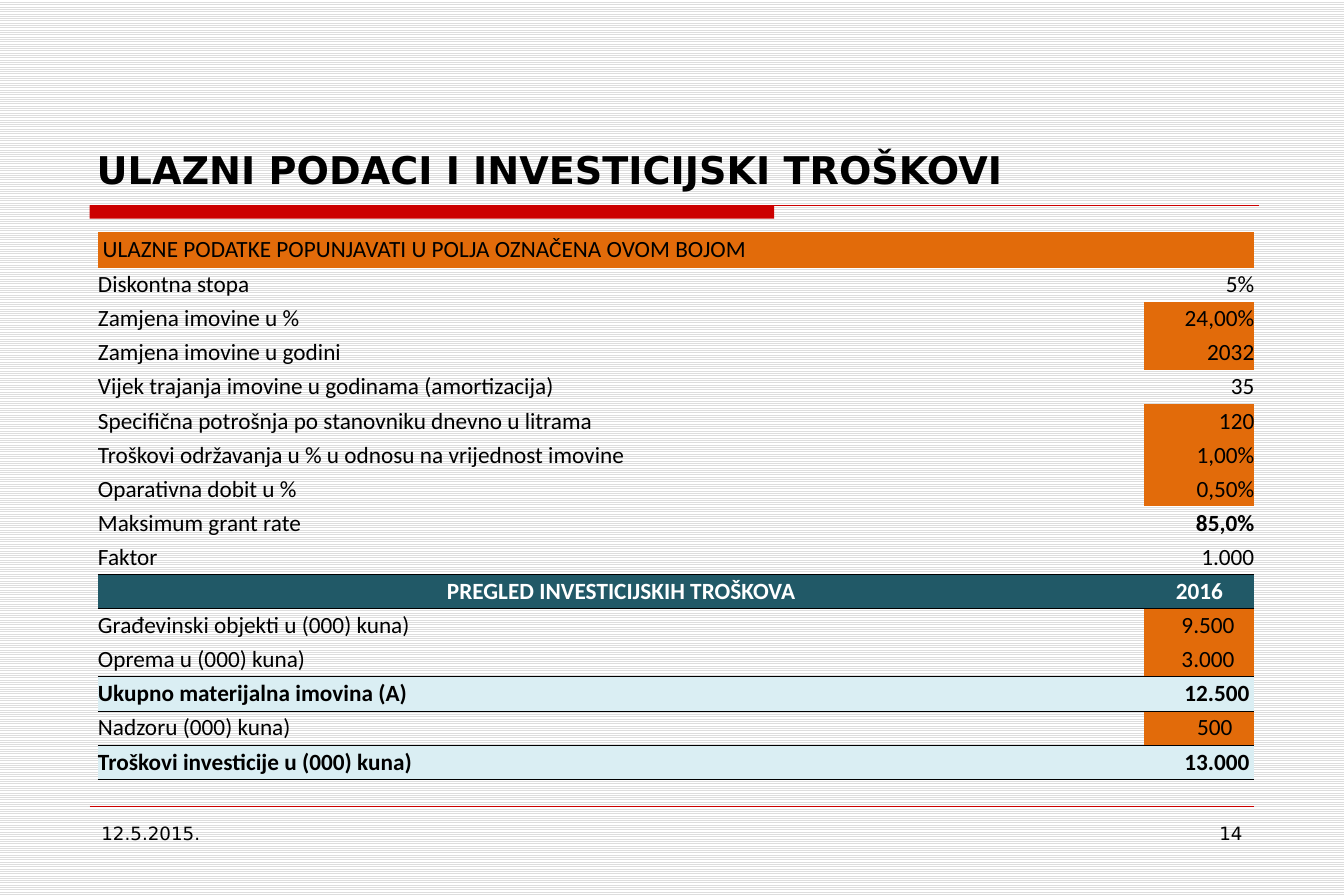
from lxml import etree
from pptx import Presentation
from pptx.dml.color import RGBColor
from pptx.enum.dml import MSO_PATTERN
from pptx.enum.shapes import MSO_CONNECTOR, MSO_SHAPE
from pptx.enum.text import MSO_ANCHOR, MSO_AUTO_SIZE, PP_ALIGN
from pptx.oxml.ns import qn
from pptx.util import Inches, Pt

COLORS = {
    "black": "000000",
    "white": "FFFFFF",
    "stripe": "DDDDDD",
    "red": "CC0000",
    "input": "E26B0A",
    "heading": "215967",
    "total": "DAEEF3",
}
TITLE = "ULAZNI PODACI I INVESTICIJSKI TROŠKOVI"
DATE = "12.5.2015."
PAGE_NUMBER = "14"

# Label, value, kind of row
ROWS = [
    ("ULAZNE PODATKE POPUNJAVATI U POLJA OZNAČENA OVOM BOJOM", "", "legend"),
    ("Diskontna stopa", "5%", "fixed"),
    ("Zamjena imovine u %", "24,00%", "input"),
    ("Zamjena imovine u godini", "2032", "input"),
    ("Vijek trajanja imovine u godinama (amortizacija)", "35", "fixed"),
    ("Specifična potrošnja po stanovniku dnevno u litrama", "120", "input"),
    ("Troškovi održavanja u % u odnosu na vrijednost imovine", "1,00%", "input"),
    ("Oparativna dobit u %", "0,50%", "input"),
    ("Maksimum grant rate", "85,0%", "strong"),
    ("Faktor", "1.000", "fixed"),
    ("PREGLED INVESTICIJSKIH TROŠKOVA", "2016", "heading"),
    ("Građevinski objekti u (000) kuna)", "9.500", "cost"),
    ("Oprema u (000) kuna)", "3.000", "cost"),
    ("Ukupno materijalna imovina (A)", "12.500", "total"),
    ("Nadzoru (000) kuna)", "500", "cost"),
    ("Troškovi investicije u (000) kuna)", "13.000", "total"),
]
RULED = ("heading", "total")  # rows with a line above and below

# Fills of the label and value cells by kind of row
FILLS = {
    "legend": ("input", "input"),
    "input": (None, "input"),
    "cost": (None, "input"),
    "heading": ("heading", "heading"),
    "total": ("total", "total"),
}
COST_INDENTS = {"9.500": 0.31, "3.000": 0.31, "500": 0.44}
COLUMN_WIDTHS = (8.76, 0.92)
TABLE_HEIGHT = 4.57


def rgb(name):
    return RGBColor.from_string(COLORS[name])


def add_run(para, text, size, font, color="black", bold=False):
    span = para.add_run()
    span.text = text
    span.font.size = Pt(size)
    span.font.name = font
    span.font.bold = bold
    span.font.color.rgb = rgb(color)


def add_rule(page, left, right, top, width):
    """Draw a horizontal red line."""
    rule = page.shapes.add_connector(
        MSO_CONNECTOR.STRAIGHT, Inches(left), Inches(top), Inches(right), Inches(top))
    rule.line.color.rgb = rgb("red")
    rule.line.width = Pt(width)
    etree.SubElement(rule._element.spPr, qn("a:effectLst"))


def add_footer(page, text, left, align):
    box = page.shapes.add_textbox(Inches(left), Inches(6.83), Inches(2.43), Inches(0.52))
    box.text_frame.word_wrap = True
    para = box.text_frame.paragraphs[0]
    para.alignment = align
    add_run(para, text, 11, "DejaVu Sans")


def set_borders(cell, above, below):
    """Line the cell above and below where asked, and clear its other edges."""
    edges = (("a:lnL", False), ("a:lnR", False), ("a:lnT", above), ("a:lnB", below))
    properties = cell._tc.get_or_add_tcPr()
    for place, (tag, drawn) in enumerate(edges):
        edge = etree.Element(qn(tag), w=str(Pt(0.5)))
        if drawn:
            fill = etree.SubElement(edge, qn("a:solidFill"))
            etree.SubElement(fill, qn("a:srgbClr"), val=COLORS["black"])
        else:
            etree.SubElement(edge, qn("a:noFill"))
        properties.insert(place, edge)


def fill_cell(cell, text, kind, is_value):
    cell.margin_left = cell.margin_right = cell.margin_top = cell.margin_bottom = 0
    cell.vertical_anchor = MSO_ANCHOR.MIDDLE
    color = FILLS.get(kind, (None, None))[is_value]
    if color:
        cell.fill.solid()
        cell.fill.fore_color.rgb = rgb(color)
    else:
        cell.fill.background()

    para = cell.text_frame.paragraphs[0]
    if kind == "heading":
        para.alignment = PP_ALIGN.CENTER
    elif is_value and kind != "cost":
        para.alignment = PP_ALIGN.RIGHT
    else:
        para.alignment = PP_ALIGN.LEFT
    if is_value and kind == "cost":
        cell.margin_left = Inches(COST_INDENTS[text])
    elif is_value and kind == "total":
        cell.margin_right = Inches(0.04)
    elif kind == "legend":
        cell.margin_left = Inches(0.04)

    bold = kind in RULED or (kind == "strong" and is_value)
    add_run(para, text, 14, "Calibri", "white" if kind == "heading" else "black", bold)


def add_cost_table(page):
    table = page.shapes.add_table(
        len(ROWS), 2, Inches(0.82), Inches(1.94),
        Inches(sum(COLUMN_WIDTHS)), Inches(TABLE_HEIGHT)).table
    table.first_row = table.horz_banding = False
    for column, width in zip(table.columns, COLUMN_WIDTHS):
        column.width = Inches(width)
    kinds = [kind for _, _, kind in ROWS] + [None]
    for index, (label, value, kind) in enumerate(ROWS):
        table.rows[index].height = Inches(TABLE_HEIGHT / len(ROWS))
        above = kind in RULED or kinds[index - 1] in RULED and index > 0
        below = kind in RULED or kinds[index + 1] in RULED
        for column, text in enumerate((label, value)):
            cell = table.cell(index, column)
            fill_cell(cell, text, kind, column == 1)
            set_borders(cell, above, below)


def main():
    deck = Presentation()
    deck.slide_width, deck.slide_height = Inches(11.25), Inches(7.5)
    page = deck.slides.add_slide(deck.slide_layouts[5])
    background = page.background.fill
    background.patterned()
    background.pattern = MSO_PATTERN.LIGHT_HORIZONTAL
    background.fore_color.rgb = rgb("stripe")
    background.back_color.rgb = rgb("white")

    bar = page.shapes.add_shape(
        MSO_SHAPE.RECTANGLE, Inches(0.75), Inches(1.72), Inches(5.73), Inches(0.11))
    bar.shadow.inherit = False
    bar.fill.solid()
    bar.fill.fore_color.rgb = rgb("red")
    bar.line.fill.background()
    add_rule(page, 0.75, 10.54, 1.72, 0.75)
    add_rule(page, 0.75, 10.5, 6.75, 0.25)

    title = page.shapes.title
    title.left, title.top = Inches(0.71), Inches(0.33)
    title.width, title.height = Inches(9.84), Inches(1.33)
    title.text_frame.auto_size = MSO_AUTO_SIZE.NONE
    title.text_frame.vertical_anchor = MSO_ANCHOR.BOTTOM
    para = title.text_frame.paragraphs[0]
    para.alignment = PP_ALIGN.LEFT
    add_run(para, TITLE, 23, "DejaVu Sans", bold=True)

    add_footer(page, DATE, 0.75, PP_ALIGN.LEFT)
    add_footer(page, PAGE_NUMBER, 8.07, PP_ALIGN.RIGHT)
    add_cost_table(page)
    deck.save("out.pptx")


if __name__ == "__main__":
    main()
